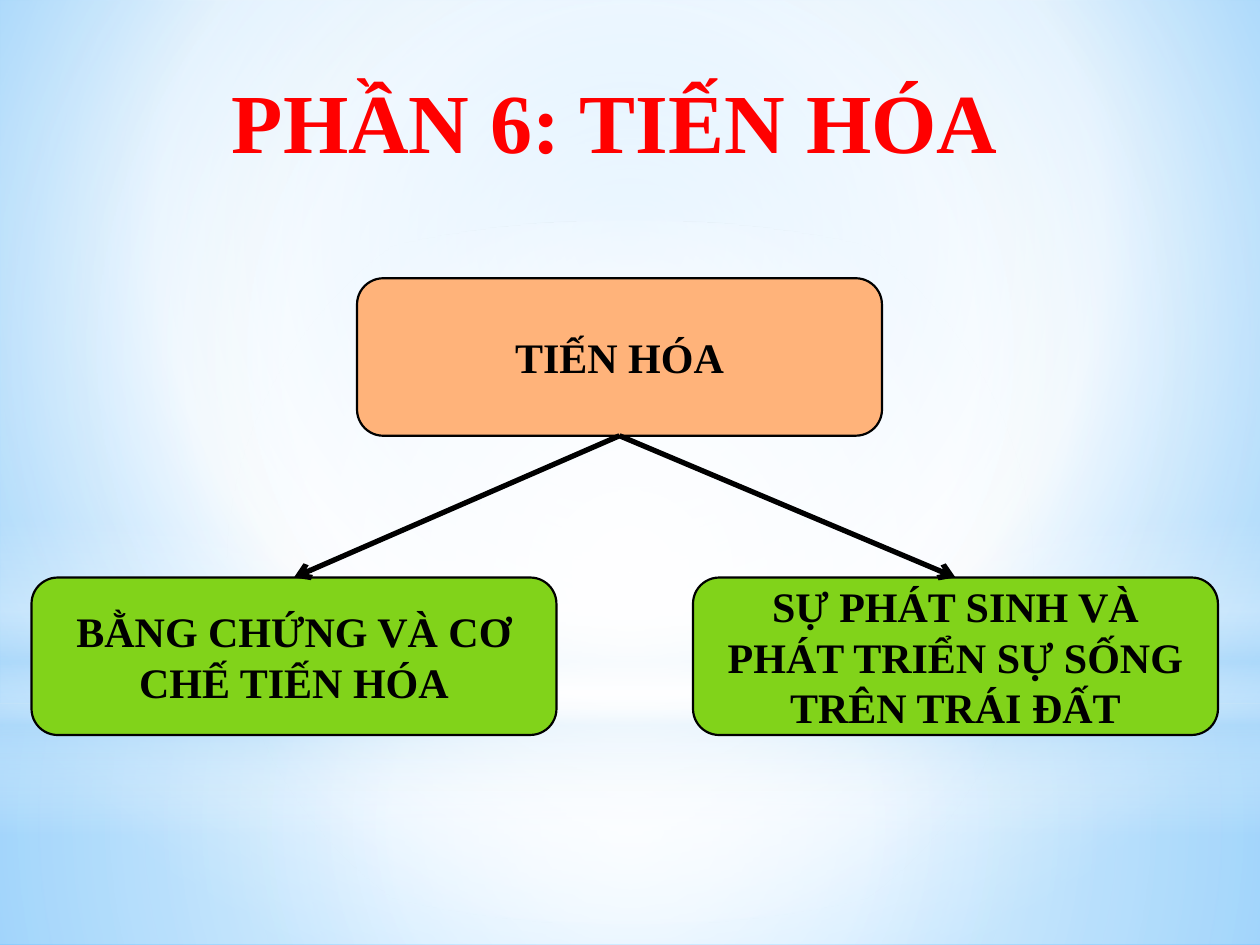
from lxml.etree import SubElement
from pptx import Presentation
from pptx.dml.color import RGBColor
from pptx.enum.shapes import MSO_CONNECTOR, MSO_SHAPE
from pptx.enum.text import MSO_ANCHOR, PP_ALIGN
from pptx.oxml import parse_xml
from pptx.oxml.ns import nsdecls, qn
from pptx.util import Pt

FONT = "Times New Roman"
COLORS = {"title": "FF0000", "root": "FFB37A", "branch": "81D31A", "ink": "000000",
          "white": "FFFFFF", "mist": "B4DCFA", "sky": "9ED5FF", "blue": "5BB9FF"}
WIDTH, HEIGHT = 720, 540
BOX_W, BOX_H = 300, 90

TITLE = "PHẦN 6: TIẾN HÓA"
ROOT = ("TIẾN HÓA", 204, 159)
BRANCHES = [
    ("BẰNG CHỨNG VÀ CƠ CHẾ TIẾN HÓA", 18, 330),
    ("SỰ PHÁT SINH VÀ PHÁT TRIỂN SỰ SỐNG TRÊN TRÁI ĐẤT", 396, 330),
]

CENTER = (50, 50, 50, 50)
PAGE_STOPS = [(0, "sky", 100), (60, "white", 100), (100, "blue", 100)]
GLOWS = [
    (MSO_SHAPE.RECTANGLE, 402, 138, CENTER,
     [(0, "white", 91), (37, "white", 76), (100, "mist", 79)]),
    (MSO_SHAPE.RECTANGLE, 0, 402, CENTER,
     [(0, "white", 89), (48, "white", 62), (100, "mist", 79)]),
    (MSO_SHAPE.RECTANGLE, 297, 180, None,
     [(0, "white", 0), (29, "white", 30), (45, "mist", 40),
      (55, "white", 26), (65, "mist", 60), (100, "white", 0)]),
    (MSO_SHAPE.OVAL, 126, 402, CENTER, [(0, "white", 100), (56, "white", 0)]),
]


def rgb(name):
    return RGBColor.from_string(COLORS[name])


def set_gradient(fill, element, stops, focus):
    fill.solid()
    gs = "".join(
        f'<a:gs pos="{pos * 1000}"><a:srgbClr val="{COLORS[color]}">'
        f'<a:alpha val="{alpha * 1000}"/></a:srgbClr></a:gs>'
        for pos, color, alpha in stops)
    if focus:
        sides = " ".join(f'{k}="{v * 1000}"' for k, v in zip("ltrb", focus))
        shade = f'<a:path path="circle"><a:fillToRect {sides}/></a:path>'
    else:
        shade = '<a:lin ang="5400000" scaled="0"/>'
    grad = parse_xml(f'<a:gradFill {nsdecls("a")} rotWithShape="1">'
                     f'<a:gsLst>{gs}</a:gsLst>{shade}</a:gradFill>')
    solid = element.find(".//" + qn("a:solidFill"))
    solid.getparent().replace(solid, grad)


def set_font(p, size, color):
    p.font.name, p.font.size, p.font.bold = FONT, Pt(size), True
    p.font.color.rgb = rgb(color)


def add_box(s, text, x, y, color):
    sp = s.shapes.add_shape(MSO_SHAPE.ROUNDED_RECTANGLE, Pt(x), Pt(y), Pt(BOX_W), Pt(BOX_H))
    sp.shadow.inherit = False
    sp.fill.solid()
    sp.fill.fore_color.rgb = rgb(color)
    sp.line.color.rgb = rgb("ink")
    sp.line.width = Pt(1.25)
    tf = sp.text_frame
    tf.word_wrap = True
    tf.vertical_anchor = MSO_ANCHOR.MIDDLE
    p = tf.paragraphs[0]
    p.text = text
    p.alignment = PP_ALIGN.CENTER
    set_font(p, 24, "ink")
    return sp


def add_arrow(s, start, end):
    line = s.shapes.add_connector(MSO_CONNECTOR.STRAIGHT, 0, 0, 0, 0)
    line.begin_connect(start, 2)
    line.end_connect(end, 0)
    line.line.color.rgb = rgb("ink")
    line.line.width = Pt(3)
    SubElement(line.line._get_or_add_ln(), qn("a:tailEnd"), type="arrow")
    SubElement(line._element.spPr, qn("a:effectLst"))


def main():
    """Build the evolution overview slide."""
    prs = Presentation()
    prs.slide_width, prs.slide_height = Pt(WIDTH), Pt(HEIGHT)
    s = prs.slides.add_slide(prs.slide_layouts[5])
    set_gradient(s.background.fill, s._element, PAGE_STOPS, (20, 10, 20, 60))

    for kind, y, h, focus, stops in GLOWS:
        sp = s.shapes.add_shape(kind, 0, Pt(y), Pt(WIDTH), Pt(h))
        sp.shadow.inherit = False
        sp.line.fill.background()
        set_gradient(sp.fill, sp._element.spPr, stops, focus)

    root = add_box(s, *ROOT, "root")
    boxes = [add_box(s, *branch, "branch") for branch in BRANCHES]
    for box in boxes:
        add_arrow(s, root, box)

    title = s.shapes.title
    title.left, title.top, title.width, title.height = Pt(125.3), Pt(36), Pt(489.6), Pt(65.5)
    tf = title.text_frame
    tf.word_wrap = True
    tf.vertical_anchor = MSO_ANCHOR.TOP
    p = tf.paragraphs[0]
    p.text = TITLE
    p.alignment = PP_ALIGN.LEFT
    set_font(p, 48, "title")
    s.shapes._spTree.append(title._element)

    prs.save("out.pptx")


if __name__ == "__main__":
    main()
